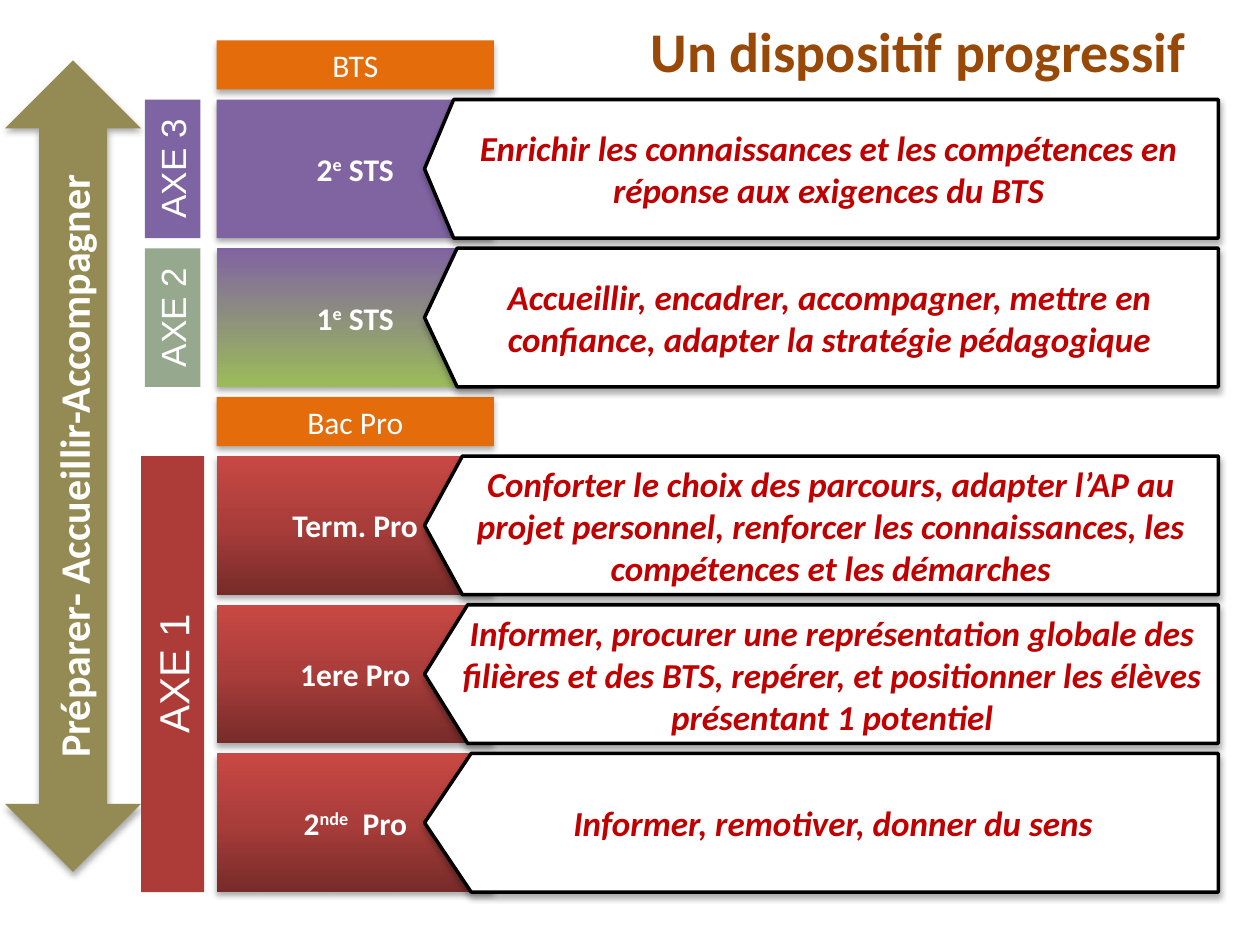
"""Build a slide showing the steps of a progressive scheme from 2nde Pro to BTS."""
from lxml import etree
from pptx import Presentation
from pptx.dml.color import RGBColor
from pptx.enum.shapes import MSO_SHAPE
from pptx.enum.text import MSO_ANCHOR, MSO_AUTO_SIZE, PP_ALIGN
from pptx.oxml.ns import qn
from pptx.util import Inches, Pt

RECT, PLATE, ARROW = MSO_SHAPE.RECTANGLE, MSO_SHAPE.PENTAGON, MSO_SHAPE.UP_DOWN_ARROW
TOP, MIDDLE = MSO_ANCHOR.TOP, MSO_ANCHOR.MIDDLE
CENTER, RIGHT = PP_ALIGN.CENTER, PP_ALIGN.RIGHT
GROW, NO_FIT = MSO_AUTO_SIZE.SHAPE_TO_FIT_TEXT, MSO_AUTO_SIZE.NONE

COLORS = {
    "white": "FFFFFF", "black": "000000", "title": "984807", "message": "C00000",
    "purple": "8064A2", "green": "9BBB59", "orange": "E46C0A", "olive": "948A54",
    "red_dark": "772B29", "red_mid": "A93D3A", "red_light": "C94844",
    "axis1": "AD3C39", "axis2": "96A88D", "axis3": "7F64A3",
}
TITLE = "Un dispositif progressif"
ARROW_TEXT = "Préparer- Accueillir-Accompagner"
PURPLE = ["purple"]
BLEND = ["green", "purple"]
RED = ["red_dark", "red_mid", "red_light"]

# label runs (superscripts start with ^), fill, message, point depth, side inset
LEVELS = [
    (["2", "^e", " STS"], PURPLE,
     "Enrichir les connaissances et les compétences en réponse aux exigences du BTS", 0.21, 0.04),
    (["1", "^e", " STS"], BLEND,
     "Accueillir, encadrer, accompagner, mettre en confiance, "
     "adapter la stratégie pédagogique", 0.235, 0.1),
    (["Term. Pro"], RED,
     "Conforter le choix des parcours, adapter l’AP au projet personnel, "
     "renforcer les connaissances, les compétences et les démarches", 0.273, 0.1),
    (["1ere Pro"], RED,
     "Informer, procurer une représentation globale des filières et des BTS, "
     "repérer, et positionner les élèves présentant 1 potentiel", 0.311, 0.04),
    (["2", "^nde", "  Pro"], RED, "Informer, remotiver, donner du sens", 0.336, 0.1),
]
DIPLOMAS = [("BTS", 0), ("Bac Pro", 2)]
# text, first level, last level, thickness, size, fill
AXES = [("AXE 1", 2, 4, 0.5, 24, "axis1"), ("AXE 2", 1, 1, 0.44, 20, "axis2"),
        ("AXE 3", 0, 0, 0.44, 20, "axis3")]

LABEL_X, LABEL_W, LEVEL_H, PITCH = 1.72, 2.2, 1.1, 1.18
FIRST_Y, DIPLOMA_H, DIPLOMA_STEP = 0.79, 0.39, 0.47
PLATE_X, PLATE_W, AXIS_X = 3.37, 6.3, 1.37


def rgb(name):
    return RGBColor.from_string(COLORS[name])


def level_top(i):
    return FIRST_Y + i * PITCH + (DIPLOMA_STEP if i >= 2 else 0)


def paint(sp, names):
    if len(names) == 1:
        sp.fill.solid()
        sp.fill.fore_color.rgb = rgb(names[0])
        return
    sp.fill.gradient()
    sp.fill.gradient_angle = 90
    stops = sp._element.spPr.find(qn("a:gradFill")).find(qn("a:gsLst"))
    for old in list(stops):
        stops.remove(old)
    for i, name in enumerate(names):
        gs = etree.SubElement(stops, qn("a:gs"), pos=str(100000 * i // (len(names) - 1)))
        etree.SubElement(gs, qn("a:srgbClr"), val=COLORS[name])


def add_shadow(sp):
    effects = sp._element.spPr.find(qn("a:effectLst"))
    outer = etree.SubElement(effects, qn("a:outerShdw"), blurRad=str(Pt(3.5)),
                             dist=str(Pt(2.2)), dir="5400000", rotWithShape="0")
    color = etree.SubElement(outer, qn("a:srgbClr"), val=COLORS["black"])
    etree.SubElement(color, qn("a:alpha"), val="32000")


def write(sp, runs, size, color="white", bold=False, italic=False, font="Calibri",
          anchor=MIDDLE, align=CENTER):
    tf = sp.text_frame
    tf.word_wrap = True
    tf.vertical_anchor = anchor
    p = tf.paragraphs[0]
    p.alignment = align
    for text in runs:
        r = p.add_run()
        r.text = text.lstrip("^")
        r.font.name, r.font.size = font, Pt(size)
        r.font.bold, r.font.italic = bold, italic
        r.font.color.rgb = rgb(color)
        if text.startswith("^"):
            r._r.get_or_add_rPr().set("baseline", "30000")


def add_block(s, kind, box, fill, shadow=True):
    sp = s.shapes.add_shape(kind, *(Inches(v) for v in box))
    paint(sp, fill)
    sp.line.fill.background()
    sp.shadow.inherit = False
    if shadow:
        add_shadow(sp)
    return sp


def add_title(s):
    title = s.shapes.title
    title.left, title.top, title.width, title.height = (
        Inches(v) for v in (0, 0.03, 9.56, 0.74))
    write(title, [TITLE], 32, "title", bold=True, anchor=TOP, align=RIGHT)
    tf = title.text_frame
    tf.auto_size = NO_FIT
    tf.margin_left, tf.margin_top, tf.margin_right, tf.margin_bottom = (
        Inches(v) for v in (0.5, 0.1, 0.15, 0))


def add_message(s, y, message, depth, inset):
    sp = add_block(s, PLATE, (PLATE_X, y, PLATE_W, LEVEL_H), ["white"])
    sp.adjustments[0] = depth
    sp._element.spPr.find(qn("a:xfrm")).set("flipH", "1")
    sp.line.color.rgb = rgb("black")
    sp.line.width = Pt(2)
    write(sp, [message], 20, "message", bold=True, italic=True)
    sp.text_frame.margin_left = sp.text_frame.margin_right = Inches(inset)


def add_axis(s, text, first, last, thickness, size, fill):
    top, bottom = level_top(first), level_top(last) + LEVEL_H
    length = bottom - top
    box = (AXIS_X - length / 2, (top + bottom - thickness) / 2, length, thickness)
    sp = add_block(s, RECT, box, [fill], shadow=False)
    sp.rotation = 270
    write(sp, [text], size, font="Arial", anchor=TOP)
    sp.text_frame.auto_size = GROW


def main():
    prs = Presentation()
    prs.slide_width, prs.slide_height = Inches(10), Inches(7.5)
    s = prs.slides.add_slide(prs.slide_layouts[5])
    add_title(s)
    for i, (label, fill, *_) in enumerate(LEVELS):
        sp = add_block(s, RECT, (LABEL_X, level_top(i), LABEL_W, LEVEL_H), fill)
        write(sp, label, 18, bold=True)
    for text, level in DIPLOMAS:
        y = level_top(level) - DIPLOMA_STEP
        write(add_block(s, RECT, (LABEL_X, y, LABEL_W, DIPLOMA_H), ["orange"]), [text], 18)
    for i, (_, _, message, depth, inset) in enumerate(LEVELS):
        add_message(s, level_top(i), message, depth, inset)
    arrow = add_block(s, ARROW, (0.04, 0.48, 1.08, 6.44), ["olive"])
    write(arrow, [ARROW_TEXT], 24, bold=True)
    arrow.text_frame._txBody.find(qn("a:bodyPr")).set("vert", "vert270")
    for axis in AXES:
        add_axis(s, *axis)
    prs.save("out.pptx")


if __name__ == "__main__":
    main()
